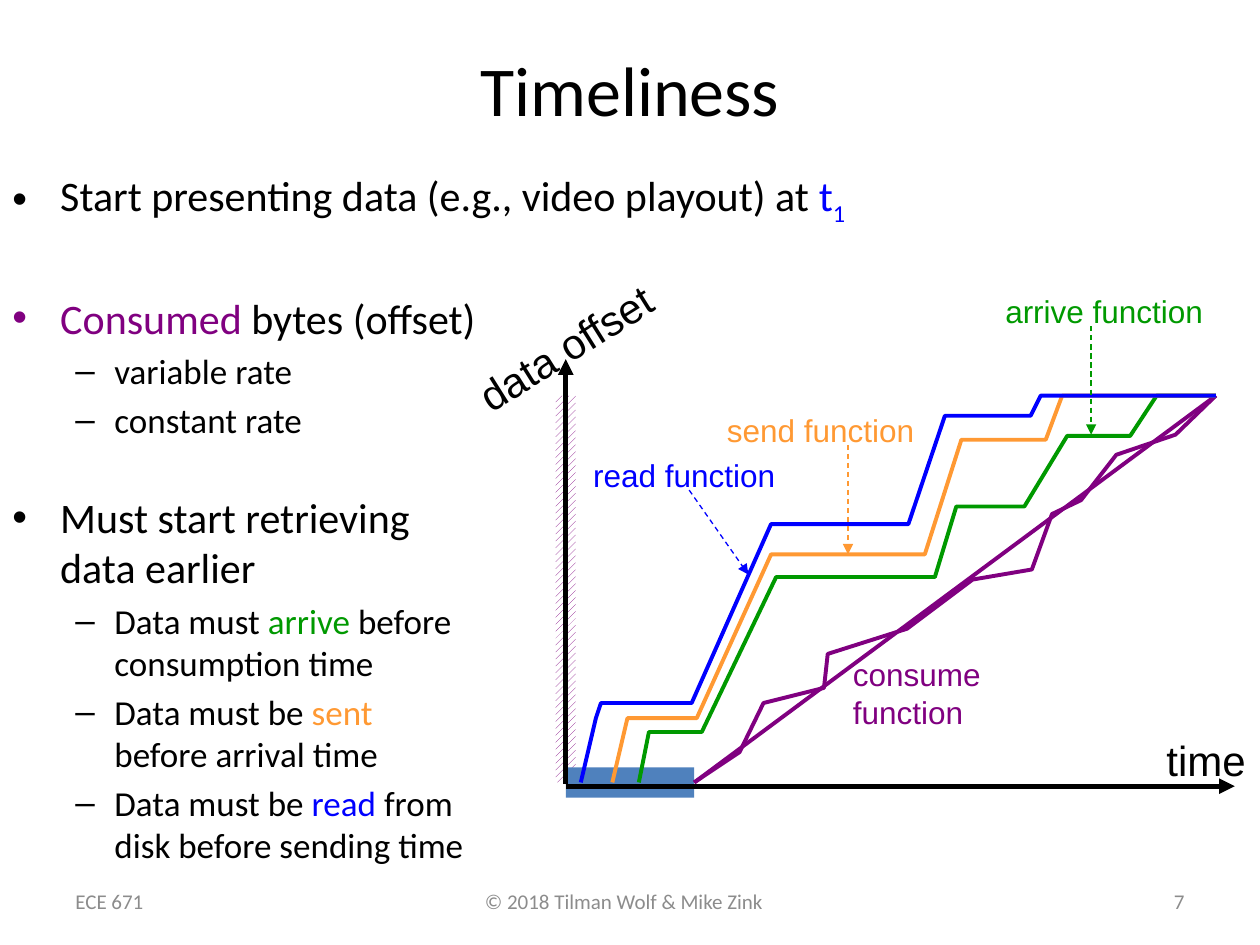
"""Build the Timeliness slide with its data offset over time diagram."""
from lxml import etree
from pptx import Presentation
from pptx.dml.color import RGBColor
from pptx.enum.dml import MSO_LINE, MSO_PATTERN
from pptx.enum.shapes import MSO_CONNECTOR, MSO_SHAPE
from pptx.enum.text import MSO_ANCHOR, PP_ALIGN
from pptx.oxml.ns import qn
from pptx.util import Inches, Pt

BLACK = RGBColor(0x00, 0x00, 0x00)
WHITE = RGBColor(0xFF, 0xFF, 0xFF)
GRAY = RGBColor(0x8C, 0x8C, 0x8C)
BLUE = RGBColor(0x00, 0x00, 0xFF)
PURPLE = RGBColor(0x80, 0x00, 0x80)
GREEN = RGBColor(0x00, 0x99, 0x00)
ORANGE = RGBColor(0xFF, 0x99, 0x33)
STEEL = RGBColor(0x4F, 0x81, 0xBD)
LEFT, CENTER, RIGHT = PP_ALIGN.LEFT, PP_ALIGN.CENTER, PP_ALIGN.RIGHT
TOP, MIDDLE = MSO_ANCHOR.TOP, MSO_ANCHOR.MIDDLE
STRAIGHT = MSO_CONNECTOR.STRAIGHT
RECTANGLE = MSO_SHAPE.RECTANGLE
DASH = MSO_LINE.DASH
HATCH = MSO_PATTERN.WIDE_UPWARD_DIAGONAL

presentation = Presentation()
presentation.slide_width = Inches(10)
presentation.slide_height = Inches(7.5)
slide = presentation.slides.add_slide(presentation.slide_layouts[6])
shapes = slide.shapes


def add_label(text, box, size, font, color, align=LEFT, anchor=TOP, wrap=False):
    label = shapes.add_textbox(*map(Inches, box))
    frame = label.text_frame
    frame.word_wrap = wrap
    frame.vertical_anchor = anchor
    paragraph = frame.paragraphs[0]
    paragraph.text = text
    paragraph.alignment = align
    for run in paragraph.runs:
        run.font.size = Pt(size)
        run.font.name = font
        run.font.color.rgb = color
    return label


def add_line(start, end, color, width, arrow=True, dash=None):
    connector = shapes.add_connector(STRAIGHT, *map(Inches, start + end))
    connector.line.color.rgb = color
    connector.line.width = Pt(width)
    if dash:
        connector.line.dash_style = dash
    if arrow:
        outline = connector.line._get_or_add_ln()
        etree.SubElement(outline, qn("a:tailEnd"), type="triangle")
    etree.SubElement(connector._element.spPr, qn("a:effectLst"))


add_label("© 2018 Tilman Wolf & Mike Zink", (3.75, 7, 2.52, 0.5), 12, "Calibri", GRAY)
add_label("Timeliness", (0.5, 0.08, 9, 1.25), 40, "Calibri", BLACK, CENTER, MIDDLE, True)
add_label("ECE 671", (0.5, 6.95, 2.33, 0.4), 12, "Calibri", GRAY, LEFT, MIDDLE, True)
add_label("7", (7.17, 6.95, 2.33, 0.4), 12, "Calibri", GRAY, RIGHT, MIDDLE, True)

LEVELS = [("•", 24, 0.38, 0.38), ("–", 20, 0.81, 0.31)]
bullets = [
    (0, 4.8, [("Start presenting data (e.g., video playout) at ", BLACK), ("t", BLUE), ("1", BLUE)]),
    (0, 37, [("Consumed", PURPLE), (" bytes (offset)", BLACK)]),
    (1, 4, [("variable rate", BLACK)]),
    (1, 4, [("constant rate", BLACK)]),
    (0, 29.2, [("Must start retrieving\vdata earlier", BLACK)]),
    (1, 4, [("Data must ", BLACK), ("arrive", GREEN), (" before\vconsumption time", BLACK)]),
    (1, 4, [("Data must be ", BLACK), ("sent", ORANGE), ("\vbefore arrival time", BLACK)]),
    (1, 4, [("Data must be ", BLACK), ("read", BLUE), (" from\vdisk before sending time", BLACK)]),
]
body = shapes.add_textbox(Inches(0), Inches(1.3), Inches(9.8), Inches(5.47)).text_frame
body.word_wrap = True
for index, (level, space, pieces) in enumerate(bullets):
    paragraph = body.add_paragraph() if index else body.paragraphs[0]
    mark, size, margin, hanging = LEVELS[level]
    paragraph.level = level
    paragraph.space_before = Pt(space)
    properties = paragraph._p.get_or_add_pPr()
    properties.set("marL", str(Inches(margin)))
    properties.set("indent", str(-Inches(hanging)))
    etree.SubElement(properties, qn("a:buFont"), typeface="Arial")
    etree.SubElement(properties, qn("a:buChar"), char=mark)
    for text, color in pieces:
        for part, line_text in enumerate(text.split("\v")):
            if part:
                paragraph.add_line_break()
            if line_text:
                run = paragraph.add_run()
                run.text = line_text
                run.font.size = Pt(size)
                run.font.name = "Calibri"
                run.font.color.rgb = color
subscript = body.paragraphs[0].runs[-1]
subscript.font._element.set("baseline", "-25000")

offset_band = shapes.add_shape(RECTANGLE, *map(Inches, (4.41, 3.14, 0.16, 3.07)))
offset_band.fill.patterned()
offset_band.fill.pattern = HATCH
offset_band.fill.fore_color.rgb = PURPLE
offset_band.fill.back_color.rgb = WHITE
delay_band = shapes.add_shape(RECTANGLE, *map(Inches, (4.49, 6.09, 1.02, 0.24)))
delay_band.fill.solid()
delay_band.fill.fore_color.rgb = STEEL
for band in (offset_band, delay_band):
    band.line.fill.background()
    band.shadow.inherit = False

add_line((4.49, 6.24), (9.8, 6.24), BLACK, 3)
add_line((4.49, 6.22), (4.49, 2.85), BLACK, 3)
add_label("time", (9.16, 5.78, 0.84, 0.5), 24, "Arial", BLACK)
add_label("data offset", (3.61, 2.5, 1.78, 0.5), 24, "Arial", BLACK).rotation = 327.9

START, FINISH = 6.21, (9.65, 3.14)
add_line((5.51, START), FINISH, PURPLE, 2.25, arrow=False)
curves = [
    (PURPLE, [(5.51, START), (5.87, 5.97), (6.06, 5.58), (6.54, 5.46), (6.57, 5.19),
              (7.2, 4.99), (7.72, 4.6), (8.19, 4.52), (8.35, 4.08), (8.58, 3.97),
              (8.86, 3.61), (9.33, 3.45), FINISH]),
    (GREEN, [(5.07, START), (5.15, 5.81), (5.57, 5.81), (6.16, 4.58), (7.42, 4.58),
             (7.59, 4.02), (8.13, 4.02), (8.47, 3.46), (8.97, 3.46), (9.18, 3.14), FINISH]),
    (ORANGE, [(4.86, START), (4.98, 5.7), (5.53, 5.7), (6.12, 4.4), (7.34, 4.4),
              (7.63, 3.49), (8.3, 3.49), (8.43, 3.14), FINISH]),
    (BLUE, [(4.61, START), (4.73, 5.7), (4.77, 5.58), (5.49, 5.58), (6.12, 4.16),
            (7.21, 4.16), (7.5, 3.3), (8.18, 3.3), (8.26, 3.14), FINISH]),
]
for color, points in curves:
    first, *others = [(Inches(x), Inches(y)) for x, y in points]
    builder = shapes.build_freeform(*first)
    builder.add_line_segments(others, close=False)
    curve = builder.convert_to_shape()
    curve.fill.background()
    curve.line.color.rgb = color
    curve.line.width = Pt(2.25)
    curve.shadow.inherit = False

add_label("consume\vfunction", (6.67, 5.15, 1.22, 0.69), 18, "Arial", PURPLE)
callouts = [
    ("arrive function", (7.88, 2.27, 1.79, 0.4), GREEN, (8.66, 2.59), (8.66, 3.45)),
    ("send function", (5.67, 3.21, 1.69, 0.4), ORANGE, (6.73, 3.53), (6.73, 4.4)),
    ("read function", (4.61, 3.57, 1.66, 0.4), BLUE, (5.47, 3.89), (5.94, 4.56)),
]
for text, box, color, start, end in callouts:
    add_label(text, box, 18, "Arial", color)
    add_line(start, end, color, 0.75, dash=DASH)

presentation.save("out.pptx")
